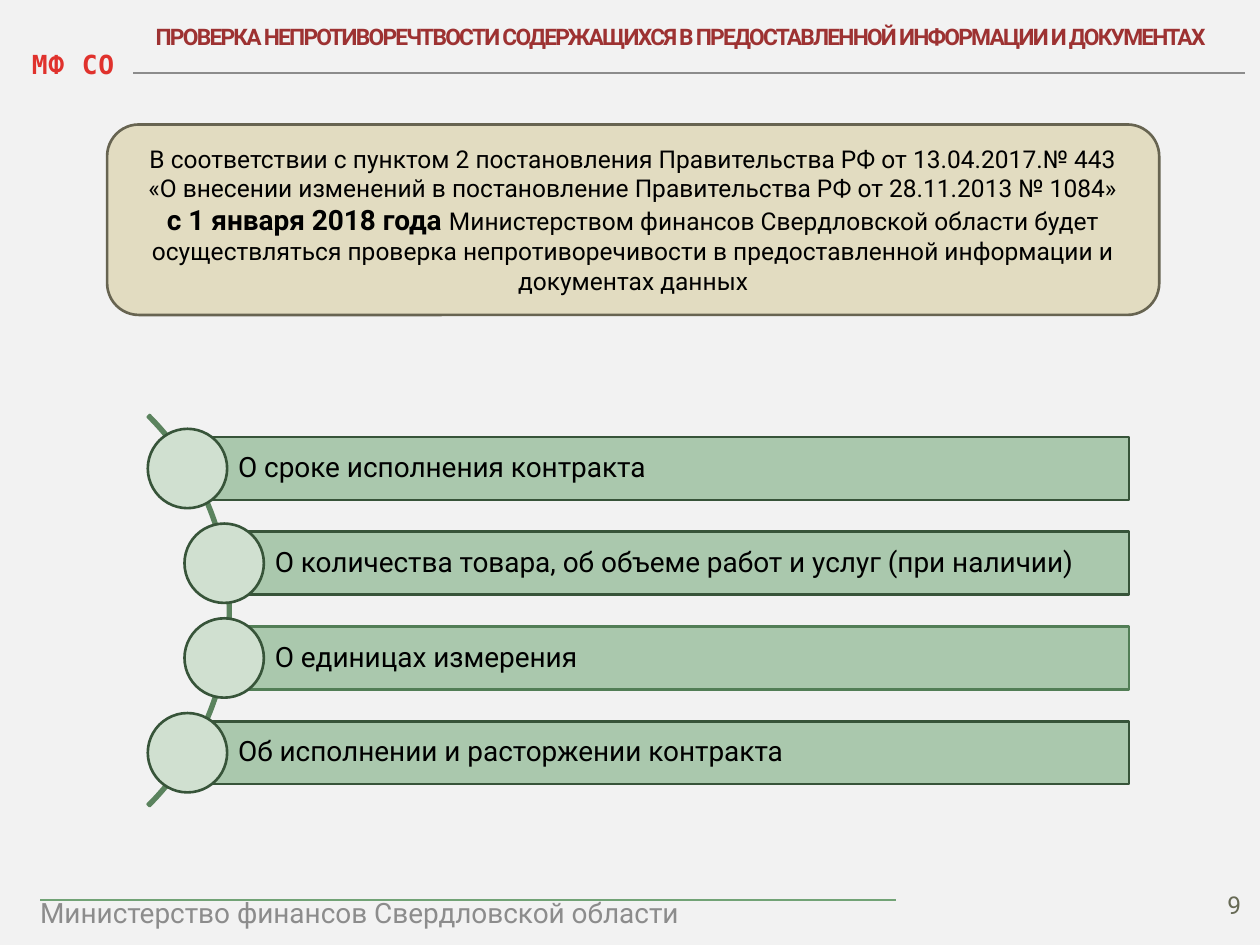
from lxml import etree
from pptx import Presentation
from pptx.dml.color import RGBColor
from pptx.enum.shapes import MSO_CONNECTOR, MSO_SHAPE
from pptx.enum.text import MSO_ANCHOR, MSO_AUTO_SIZE, PP_ALIGN
from pptx.oxml.ns import qn
from pptx.util import Cm, Pt

LEFT, CENTER, RIGHT = PP_ALIGN.LEFT, PP_ALIGN.CENTER, PP_ALIGN.RIGHT
TOP, MIDDLE, BOTTOM = MSO_ANCHOR.TOP, MSO_ANCHOR.MIDDLE, MSO_ANCHOR.BOTTOM
FONT, LOGO_FONT = "Roboto", "DejaVu Sans Mono"
INSETS = (0.25, 0.13, 0.25, 0.13)

# Content: a paragraph is a list of runs (text, size, bold)
TITLE = "ПРОВЕРКА НЕПРОТИВОРЕЧТВОСТИ СОДЕРЖАЩИХСЯ В ПРЕДОСТАВЛЕННОЙ ИНФОРМАЦИИ И ДОКУМЕНТАХ"
BASIS = [
    [("В соответствии с пунктом 2 постановления Правительства РФ от 13.04.2017.№ 443", 14, False)],
    [("«О внесении изменений в постановление Правительства РФ от 28.11.2013 № 1084»", 14, False)],
    [("с 1 января 2018 года ", 16, True),
     ("Министерством финансов Свердловской области будет осуществляться проверка "
      "непротиворечивости в предоставленной информации и документах данных", 14, False)],
]
# Checks: text, left edge of the bar, outline
CHECKS = [
    ("О сроке исполнения контракта", 3.78, "375439"),
    ("О количества товара, об объеме работ и услуг (при наличии)", 4.52, "375439"),
    ("О единицах измерения", 4.52, "527E56"),
    ("Об исполнении и расторжении контракта", 3.78, "375439"),
]
# Rules: left, right, height on the slide, colour
RULES = [(2.69, 25.1, 1.47, "8C8C8C"), (0.81, 18.06, 18.14, "72A376")]

BAR_TOP, BAR_STEP, BAR_HEIGHT, BAR_RIGHT = 8.81, 1.91, 1.27, 22.76
DOT = 1.6
ARC = 11.15


def rgb(code):
    return RGBColor.from_string(code)


def write(sp, paragraphs, color, align=LEFT, anchor=TOP, insets=INSETS,
          font=FONT, spacing=None, line_spacing=None, wrap=True):
    tf = sp.text_frame
    tf.auto_size = MSO_AUTO_SIZE.NONE
    tf.word_wrap = wrap
    tf.vertical_anchor = anchor
    tf.margin_left, tf.margin_top, tf.margin_right, tf.margin_bottom = map(Cm, insets)
    for i, runs in enumerate(paragraphs):
        p = tf.add_paragraph() if i else tf.paragraphs[0]
        p.alignment = align
        if line_spacing:
            p.line_spacing = line_spacing
        for text, size, bold in runs:
            r = p.add_run()
            r.text = text
            r.font.name, r.font.size, r.font.bold = font, Pt(size), bold
            r.font.color.rgb = rgb(color)
            if spacing:
                r.font._element.set("spc", str(spacing))


def add_shape(s, kind, box, fill, line):
    sp = s.shapes.add_shape(kind, *map(Cm, box))
    sp.shadow.inherit = False
    if fill:
        sp.fill.solid()
        sp.fill.fore_color.rgb = rgb(fill)
    else:
        sp.fill.background()
    sp.line.color.rgb = rgb(line)
    sp.line.width = Pt(1.5)
    return sp


def add_text(s, box, paragraphs, color, **options):
    write(s.shapes.add_textbox(*map(Cm, box)), paragraphs, color, **options)


def add_rule(s, left, right, y, color):
    line = s.shapes.add_connector(MSO_CONNECTOR.STRAIGHT, Cm(left), Cm(y), Cm(right), Cm(y))
    line.line.color.rgb = rgb(color)
    line.line.width = Pt(0.94)
    etree.SubElement(line._element.spPr, qn("a:effectLst"))


def main():
    prs = Presentation()
    prs.slide_width, prs.slide_height = Cm(25.4), Cm(19.05)
    s = prs.slides.add_slide(prs.slide_layouts[5])
    s.background.fill.solid()
    s.background.fill.fore_color.rgb = rgb("F2F2F2")

    # Header and footer
    add_text(s, (-0.15, 0.74, 3.25, 0.99), [[("МФ СО", 15, True)]], "E0322D",
             align=CENTER, font=LOGO_FONT, spacing=50, line_spacing=1.15)
    add_text(s, (0.56, 17.93, 18.24, 0.94),
             [[("Министерство финансов Свердловской области", 16, False)]], "8C8C8C")
    add_text(s, (23.72, 17.65, 1.55, 1.02), [[("9", 14, False)]], "676A55",
             align=RIGHT, anchor=BOTTOM)
    for rule in RULES:
        add_rule(s, *rule)

    # Title
    title = s.shapes.title
    title.left, title.top, title.width, title.height = map(Cm, (2.84, 0.33, 21.74, 0.81))
    write(title, [[(TITLE, 13, True)]], "9D3232", align=CENTER, spacing=-100, wrap=False)

    # Legal basis
    basis = add_shape(s, MSO_SHAPE.ROUNDED_RECTANGLE, (2.16, 2.51, 21.21, 3.84),
                      "E2DCC1", "676451")
    write(basis, BASIS, "000000", align=CENTER, anchor=MIDDLE)

    # Arc behind the list, centred on its height
    middle = BAR_TOP + (BAR_STEP * (len(CHECKS) - 1) + BAR_HEIGHT) / 2
    arc = add_shape(s, MSO_SHAPE.BLOCK_ARC, (-6.5, middle - ARC / 2, ARC, ARC), None, "5B835E")
    for i, value in enumerate((189, 27, 0.005)):
        arc.adjustments[i] = value

    # Bars, each with a circle centred on its left edge
    for i, (text, left, line) in enumerate(CHECKS):
        top = BAR_TOP + i * BAR_STEP
        bar = add_shape(s, MSO_SHAPE.RECTANGLE, (left, top, BAR_RIGHT - left, BAR_HEIGHT),
                        "AAC8AD", line)
        write(bar, [[(text, 16, False)]], "000000", anchor=MIDDLE,
              insets=(1.02, 0.1, 0.1, 0.1), line_spacing=0.9)
        add_shape(s, MSO_SHAPE.OVAL,
                  (left - DOT / 2, top + (BAR_HEIGHT - DOT) / 2, DOT, DOT), "D0E0D0", "375439")

    prs.save("out.pptx")


if __name__ == "__main__":
    main()
